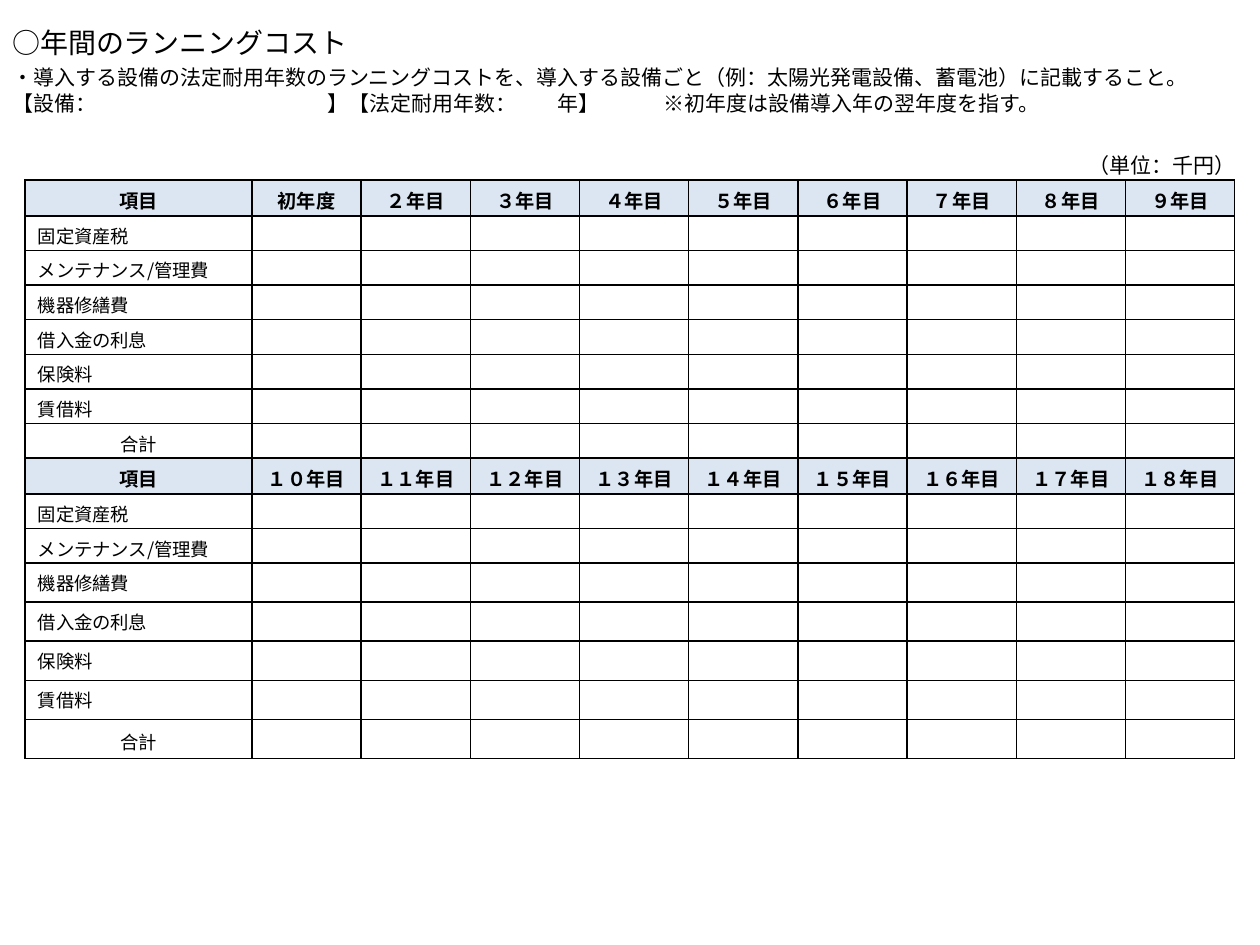
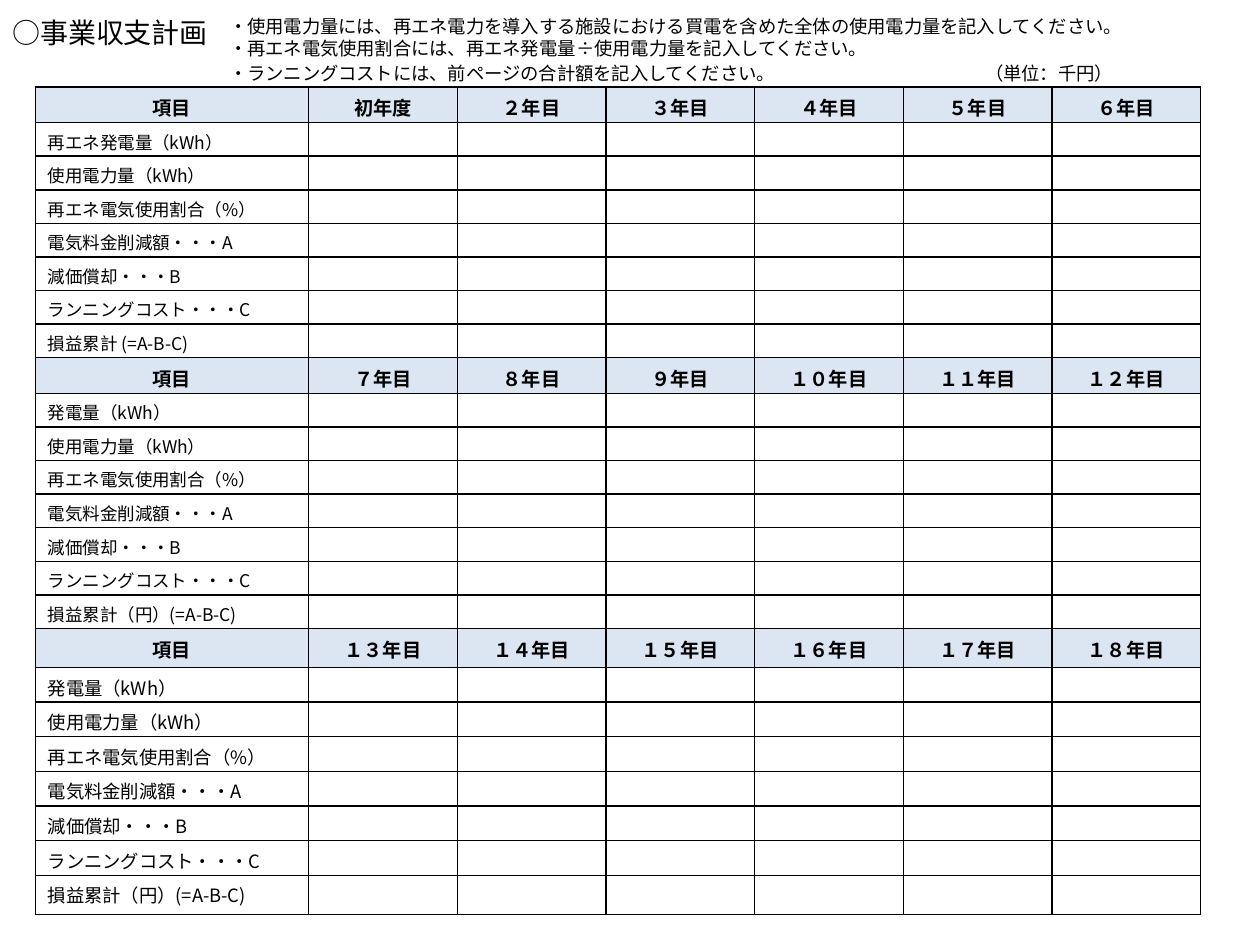
from lxml.etree import SubElement
from pptx import Presentation
from pptx.dml.color import RGBColor
from pptx.enum.text import MSO_ANCHOR as Anchor, PP_ALIGN as Align
from pptx.oxml.ns import qn
from pptx.util import Inches, Pt

FONT = "Noto Sans CJK JP"
BLACK = "000000"
HEADER_FILL = "DCE6F2"
WIDE_DIGITS = str.maketrans("0123456789", "０１２３４５６７８９")


def color(hex_value):
    return RGBColor.from_string(hex_value)


def write(frame, text, size=12, bold=False, align=Align.LEFT, pitches=(), tabs=()):
    frame.word_wrap = True
    for index, line in enumerate(text.split("\n")):
        para = frame.paragraphs[0] if index == 0 else frame.add_paragraph()
        para.alignment = align
        if pitches:
            para.line_spacing = Pt(pitches[index])
        if "\t" in line:
            stops = SubElement(para._p.get_or_add_pPr(), qn("a:tabLst"))
            for stop in tabs:
                SubElement(stops, qn("a:tab"), pos=str(Inches(stop)), algn="l")
        if not line:
            SubElement(para._p, qn("a:endParaRPr"), sz=str(int(size * 100)))
            continue
        run = para.add_run()
        run.text = line
        run.font.size = Pt(size)
        run.font.bold = bold
        run.font.name = FONT
        run.font.color.rgb = color(BLACK)
        SubElement(run._r.get_or_add_rPr(), qn("a:ea"), typeface=FONT)


cost_items = ["固定資産税", "メンテナンス/管理費", "機器修繕費", "借入金の利息", "保険料", "賃借料", "合計"]
shared_items = ["使用電力量（kWh）", "再エネ電気使用割合（%）", "電気料金削減額・・・A",
                "減価償却・・・B", "ランニングコスト・・・C"]
first_items = ["再エネ発電量（kWh）", *shared_items, "損益累計 (=A-B-C)"]
later_items = ["発電量（kWh）", *shared_items, "損益累計（円）(=A-B-C)"]

pages = [
    {
        "captions": [
            ("○年間のランニングコスト", (0, 0.13, 4.59, 0.37), 16, [19.2], []),
            ("・導入する設備の法定耐用年数のランニングコストを、導入する設備ごと"
             "（例：太陽光発電設備、蓄電池）に記載すること。\n"
             "【設備：\t】【法定耐用年数：\t年】\t※初年度は設備導入年の翌年度を指す。",
             (0, 0.44, 9.88, 0.5), 12, [14.4, 14.8], [2.5, 4.33, 5.17]),
            ("（単位：千円）", (8.54, 1.14, 1.5, 0.3), 12, [14.4], []),
        ],
        "place": (0.2, 1.43, 9.6, 4.59),
        "item_width": 1.8,
        "years_per_block": 9,
        "blocks": [(cost_items, 10.5), (cost_items, 10.5)],
        "tall_rows": range(11, 16),
    },
    {
        "captions": [
            ("○事業収支計画", (0, 0.05, 6.57, 0.37), 16, [19.2], []),
            ("・使用電力量には、再エネ電力を導入する施設における買電を含めた全体の使用電力量を記入してください。\n"
             "・再エネ電気使用割合には、再エネ発電量÷使用電力量を記入してください。\n"
             "・ランニングコストには、前ページの合計額を記入してください。\t（単位：千円）",
             (1.72, 0.05, 8.24, 0.86), 10.5, [12.6, 12.6, 14.4], [6]),
        ],
        "place": (0.28, 0.69, 9.25, 6.57),
        "item_width": 2.17,
        "years_per_block": 6,
        "blocks": [(first_items, 10), (later_items, 10), (later_items, 10.5)],
        "tall_rows": (16, 23),
    },
]

prs = Presentation()
prs.slide_width, prs.slide_height = Inches(10), Inches(7.5)

for page in pages:
    slide = prs.slides.add_slide(prs.slide_layouts[6])
    years = page["years_per_block"]

    rows = []
    for block, (items, item_size) in enumerate(page["blocks"]):
        first_year = block * years + 1
        labels = [f"{year}年目".translate(WIDE_DIGITS) if year > 1 else "初年度"
                  for year in range(first_year, first_year + years)]
        rows.append((["項目", *labels], 11, True))
        rows += [([item] + [""] * years, item_size, False) for item in items]

    place = [Inches(value) for value in page["place"]]
    plan_frame = slide.shapes.add_table(len(rows), years + 1, *place)
    plan = plan_frame.table
    plan.horz_banding = False
    plan.first_row = False
    item_width = Inches(page["item_width"])
    plan.columns[0].width = item_width
    for column in range(1, years + 1):
        plan.columns[column].width = int((place[2] - item_width) / years)

    for row, (texts, size, is_header) in enumerate(rows):
        tall = row in page["tall_rows"]
        plan.rows[row].height = Inches(0.31 if tall else size / 60 + 0.1)
        for column, text in enumerate(texts):
            cell = plan.cell(row, column)
            cell.margin_top, cell.margin_bottom = Inches(0.05), Inches(0.01)
            centered = is_header or text == "合計"
            write(cell.text_frame, text, size=size, bold=is_header,
                  align=Align.CENTER if centered else Align.LEFT)
            cell.vertical_anchor = Anchor.MIDDLE if text == "合計" else Anchor.TOP
            for side in ("a:lnL", "a:lnR", "a:lnT", "a:lnB"):
                border = SubElement(cell._tc.get_or_add_tcPr(), qn(side), w=str(Pt(1)))
                SubElement(SubElement(border, qn("a:solidFill")), qn("a:srgbClr"), val=BLACK)
            if is_header:
                cell.fill.solid()
                cell.fill.fore_color.rgb = color(HEADER_FILL)
            else:
                cell.fill.background()

    for text, caption_place, size, pitches, tabs in page["captions"]:
        caption = slide.shapes.add_textbox(*[Inches(value) for value in caption_place]).text_frame
        caption.margin_top, caption.margin_bottom = Inches(0.07), Inches(0.03)
        write(caption, text, size=size, pitches=pitches, tabs=tabs)

prs.save("out.pptx")
